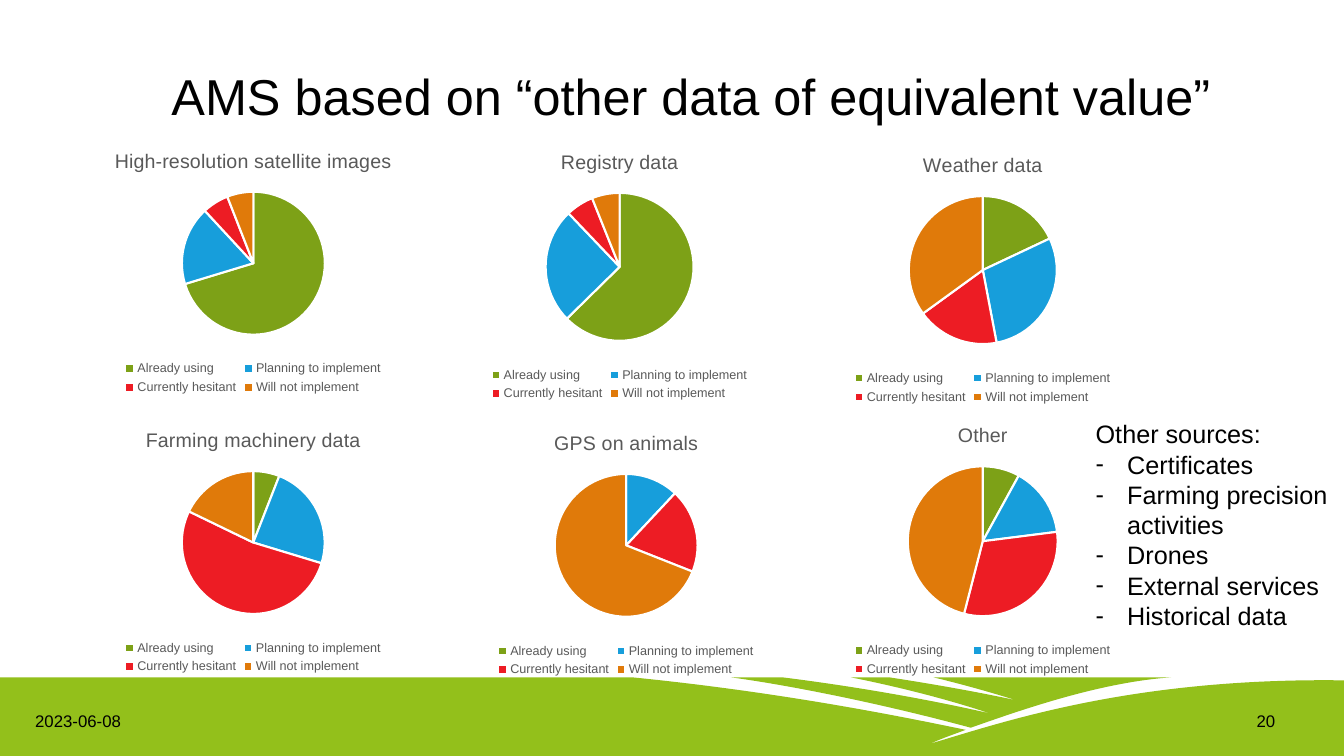
import pptx
import pptx.chart.data
import pptx.dml.color
import pptx.enum.chart
import pptx.enum.text
import pptx.oxml
import pptx.util
from lxml import etree

Pt = pptx.util.Pt
qn = pptx.oxml.ns.qn
ALIGN = pptx.enum.text.PP_ALIGN
ANCHOR = pptx.enum.text.MSO_ANCHOR

# Content
TITLE = "AMS based on “other data of equivalent value”"
DATE, PAGE = "2023-06-08", "20"
SOURCES = ["Certificates", "Farming precision activities", "Drones",
           "External services", "Historical data"]
ANSWERS = ["Already using", "Planning to implement",
           "Currently hesitant", "Will not implement"]
PIES = [  # title, values, (left, top, width, height)
    ("High-resolution satellite images", (71, 18, 6, 6), (29.5, 95.5, 303, 189.4)),
    ("Registry data", (62, 25, 6, 6), (303.3, 96.3, 278.6, 193)),
    ("Farming machinery data", (6, 24, 53, 18), (44.5, 295, 272.9, 189.4)),
    ("Weather data", (18, 29, 18, 35), (554.4, 98.6, 295.2, 193)),
    ("GPS on animals", (0, 12, 19, 69), (322.4, 297, 249.8, 189.4)),
    ("Other", (8, 15, 31, 46), (582.5, 291.6, 239, 194.4)),
]
# Field outlines: two numbers end a line, six end a curve
FIELDS = [
    [(666.7, 483.8), (687.6, 488.9, 705.6, 493.9, 726.5, 500.4),
     (726.5, 500.4, 691.9, 492.5, 635, 483.8), (607.7, 483.8),
     (640.1, 490.3, 675.4, 499, 707.8, 509.8),
     (707.8, 509.8, 645.1, 494.6, 558.7, 483.8), (522, 483.8),
     (569.5, 490.3, 635, 504, 693.4, 519.8),
     (730.1, 506.9, 785.5, 487.4, 836.6, 483.8)],
    [(689.8, 521.3), (661, 515.5, 568.1, 495.4, 451.4, 483.8), (0, 483.8),
     (0, 540), (960, 540), (960, 486),
     (805.7, 483.8, 713.5, 517, 663.8, 531.4),
     (677.5, 525.6, 680.4, 524.9, 689.8, 521.3)],
]

THEME = {
    "font": "Arial", "ink": "000000", "gray": "595959", "field": "93C01B",
    "edge": "FFFFFF", "slices": ["7DA117", "179EDB", "ED1C24", "E07A0A"],
    "title": 36, "body": 18, "foot": 12, "head": 14, "chart": 10, "key": 9,
}
PIE_TOP, PIE_REST = 41.5, 87.3   # space above a pie, and above plus below
INDENT = 22.5


def rgb(code):
    return pptx.dml.color.RGBColor.from_string(code)


def style(font, size, color):
    font.name, font.size, font.bold = THEME["font"], Pt(size), False
    font.color.rgb = rgb(color)


def add_text(slide, lines, box, size, align=ALIGN.LEFT, anchor=ANCHOR.TOP,
             spacing=1.0, bullet_from=None):
    frame = slide.shapes.add_textbox(*map(Pt, box)).text_frame
    frame.word_wrap = True
    frame.vertical_anchor = anchor
    for i, line in enumerate(lines):
        para = frame.paragraphs[0] if i == 0 else frame.add_paragraph()
        para.alignment, para.line_spacing = align, spacing
        if bullet_from is not None and i >= bullet_from:
            props = para._p.get_or_add_pPr()
            props.set("marL", str(Pt(INDENT)))
            props.set("indent", str(-Pt(INDENT)))
            face = etree.SubElement(props, qn("a:buFont"))
            face.set("typeface", THEME["font"])
            mark = etree.SubElement(props, qn("a:buChar"))
            mark.set("char", "-")
        run = para.add_run()
        run.text = line
        style(run.font, size, THEME["ink"])


def add_fields(slide):
    ends = [[tuple(map(Pt, part[-2:])) for part in path] for path in FIELDS]
    pen = slide.shapes.build_freeform(*ends[0][0], scale=1.0)
    pen.add_line_segments(ends[0][1:], close=True)
    for points in ends[1:]:
        pen.move_to(*points[0])
        pen.add_line_segments(points[1:], close=True)
    shape = pen.convert_to_shape()
    shape.shadow.inherit = False
    shape.fill.solid()
    shape.fill.fore_color.rgb = rgb(THEME["field"])
    shape.line.fill.background()

    # Bend the lines that are curves
    parts = [part for path in FIELDS for part in path[1:]]
    for part, line in zip(parts, list(shape._element.iter(qn("a:lnTo")))):
        if len(part) == 6:
            curve = etree.Element(qn("a:cubicBezTo"))
            for x, y in zip(part[::2], part[1::2]):
                point = etree.SubElement(curve, qn("a:pt"))
                point.set("x", str(Pt(x) - shape.left))
                point.set("y", str(Pt(y) - shape.top))
            line.getparent().replace(line, curve)


def place_plot(chart, width, height):
    size = height - PIE_REST
    area = {"x": (width - size) / 2 / width, "y": PIE_TOP / height,
            "w": size / width, "h": size / height}
    plot = chart._chartSpace.chart.plotArea
    for old in plot.findall(qn("c:layout")):
        plot.remove(old)
    modes = '<c:layoutTarget val="inner"/><c:xMode val="edge"/><c:yMode val="edge"/>'
    sizes = "".join(f'<c:{k} val="{v:.4f}"/>' for k, v in area.items())
    plot.insert(0, pptx.oxml.parse_xml(
        f'<c:layout {pptx.oxml.ns.nsdecls("c")}><c:manualLayout>'
        f'{modes}{sizes}</c:manualLayout></c:layout>'))


def add_pie(slide, title, values, box):
    data = pptx.chart.data.CategoryChartData()
    data.categories = ANSWERS
    data.add_series("Series 1", values)
    kind = pptx.enum.chart.XL_CHART_TYPE.PIE
    chart = slide.shapes.add_chart(kind, *map(Pt, box), data).chart
    style(chart.font, THEME["chart"], THEME["ink"])
    chart.has_title = True
    chart.chart_title.include_in_layout = False
    run = chart.chart_title.text_frame.paragraphs[0].add_run()
    run.text = title
    style(run.font, THEME["head"], THEME["gray"])
    chart.has_legend = True
    chart.legend.position = pptx.enum.chart.XL_LEGEND_POSITION.BOTTOM
    chart.legend.include_in_layout = False
    style(chart.legend.font, THEME["key"], THEME["gray"])
    plot = chart.plots[0]
    plot.vary_by_categories = True
    for i, color in enumerate(THEME["slices"]):
        look = plot.series[0].points[i].format
        look.fill.solid()
        look.fill.fore_color.rgb = rgb(color)
        look.line.color.rgb = rgb(THEME["edge"])
        look.line.width = Pt(1.5)
    place_plot(chart, *box[2:])


def main():
    deck = pptx.Presentation()
    deck.slide_width, deck.slide_height = Pt(960), Pt(540)
    slide = deck.slides.add_slide(deck.slide_layouts[6])

    # Ground and heading
    add_fields(slide)
    add_text(slide, [TITLE], (115.4, 0, 782.6, 94), THEME["title"],
             anchor=ANCHOR.BOTTOM, spacing=0.9)

    # Footer
    for text, left in ((DATE, 0), (PAGE, 848.4)):
        add_text(slide, [text], (left, 500.4, 111.6, 28.8), THEME["foot"],
                 align=ALIGN.CENTER, anchor=ANCHOR.MIDDLE)

    # Source list and pies
    add_text(slide, ["Other sources:"] + SOURCES, (775.6, 295.6, 187.2, 181.4),
             THEME["body"], bullet_from=1)
    for title, values, box in PIES:
        add_pie(slide, title, values, box)
    deck.save("out.pptx")


if __name__ == "__main__":
    main()
